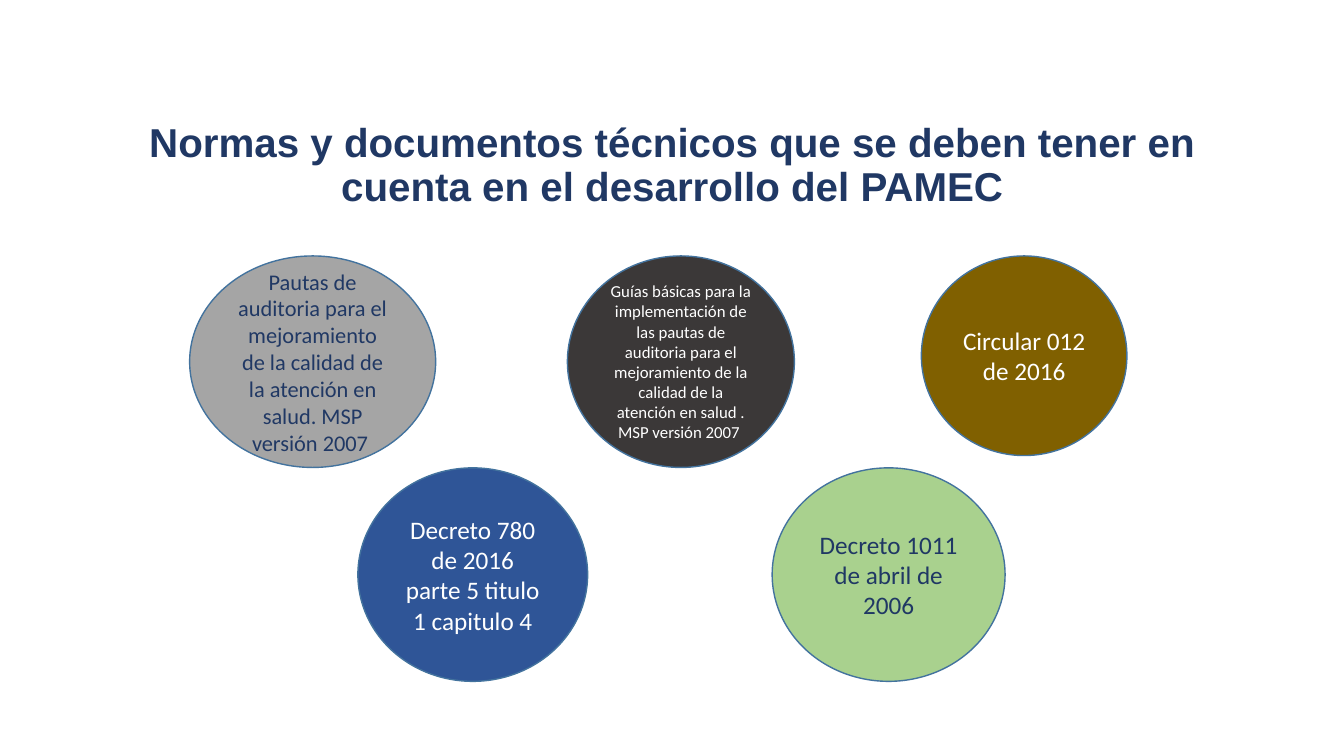
from pptx import Presentation
from pptx import util as u
from pptx.dml.color import RGBColor
from pptx.enum import shapes, text

NAVY = RGBColor(0x20, 0x38, 0x64)
WHITE = RGBColor(0xFF, 0xFF, 0xFF)
OUTLINE = RGBColor(0x43, 0x73, 0x9E)
GRAY = RGBColor(0xA5, 0xA5, 0xA5)
CHARCOAL = RGBColor(0x3B, 0x38, 0x38)
BROWN = RGBColor(0x80, 0x60, 0x00)
BLUE = RGBColor(0x2F, 0x55, 0x97)
GREEN = RGBColor(0xA9, 0xD1, 0x8E)

UPPER_ROW = 6.45
LOWER_ROW = 11.79


def write(box, words, size, color, font="Calibri", bold=False, spacing=1.0,
          anchor=text.MSO_ANCHOR.MIDDLE):
    frame = box.text_frame
    frame.word_wrap = True
    frame.vertical_anchor = anchor
    para = frame.paragraphs[0]
    para.alignment = text.PP_ALIGN.CENTER
    para.line_spacing = spacing
    span = para.add_run()
    span.text = words
    span.font.name = font
    span.font.size = u.Pt(size)
    span.font.bold = bold
    span.font.color.rgb = color


def add_title(page, words):
    box = page.shapes.add_textbox(u.Cm(2.34), u.Cm(1.02), u.Cm(29.21), u.Cm(4.32))
    box.text_frame.margin_bottom = u.Cm(0.05)
    write(box, words, 28.8, NAVY, font="Arial", bold=True, spacing=0.9,
          anchor=text.MSO_ANCHOR.BOTTOM)


def add_document(page, words, left, top, width, height, fill, size=18, color=WHITE):
    box = page.shapes.add_shape(shapes.MSO_SHAPE.OVAL, u.Cm(left), u.Cm(top),
                                u.Cm(width), u.Cm(height))
    box.shadow.inherit = False
    box.fill.solid()
    box.fill.fore_color.rgb = fill
    box.line.color.rgb = OUTLINE
    box.line.width = u.Pt(1)
    write(box, words, size, color)


def main():
    deck = Presentation()
    deck.slide_width = u.Cm(33.87)
    deck.slide_height = u.Cm(19.05)
    page = deck.slides.add_slide(deck.slide_layouts[6])

    add_title(page, "Normas y documentos técnicos que se deben tener en cuenta "
                    "en el desarrollo del PAMEC")
    add_document(page, "Pautas de auditoria para el mejoramiento de la calidad de "
                       "la atención en salud. MSP versión 2007 ",
                 4.78, UPPER_ROW, 6.2, 5.33, GRAY, size=16, color=NAVY)
    add_document(page, "Guías básicas para la implementación de las pautas de "
                       "auditoria para el mejoramiento de la calidad de la "
                       "atención en salud . MSP versión 2007 ",
                 14.3, UPPER_ROW, 5.72, 5.33, CHARCOAL, size=12)
    add_document(page, "Circular 012 de 2016",
                 23.22, UPPER_ROW, 5.18, 5.03, BROWN)
    add_document(page, "Decreto 780 de 2016 parte 5 titulo 1 capitulo 4",
                 9.02, LOWER_ROW, 5.79, 5.38, BLUE)
    add_document(page, "Decreto 1011 de abril de 2006",
                 19.46, LOWER_ROW, 5.87, 5.38, GREEN, color=NAVY)
    deck.save("out.pptx")


if __name__ == "__main__":
    main()
